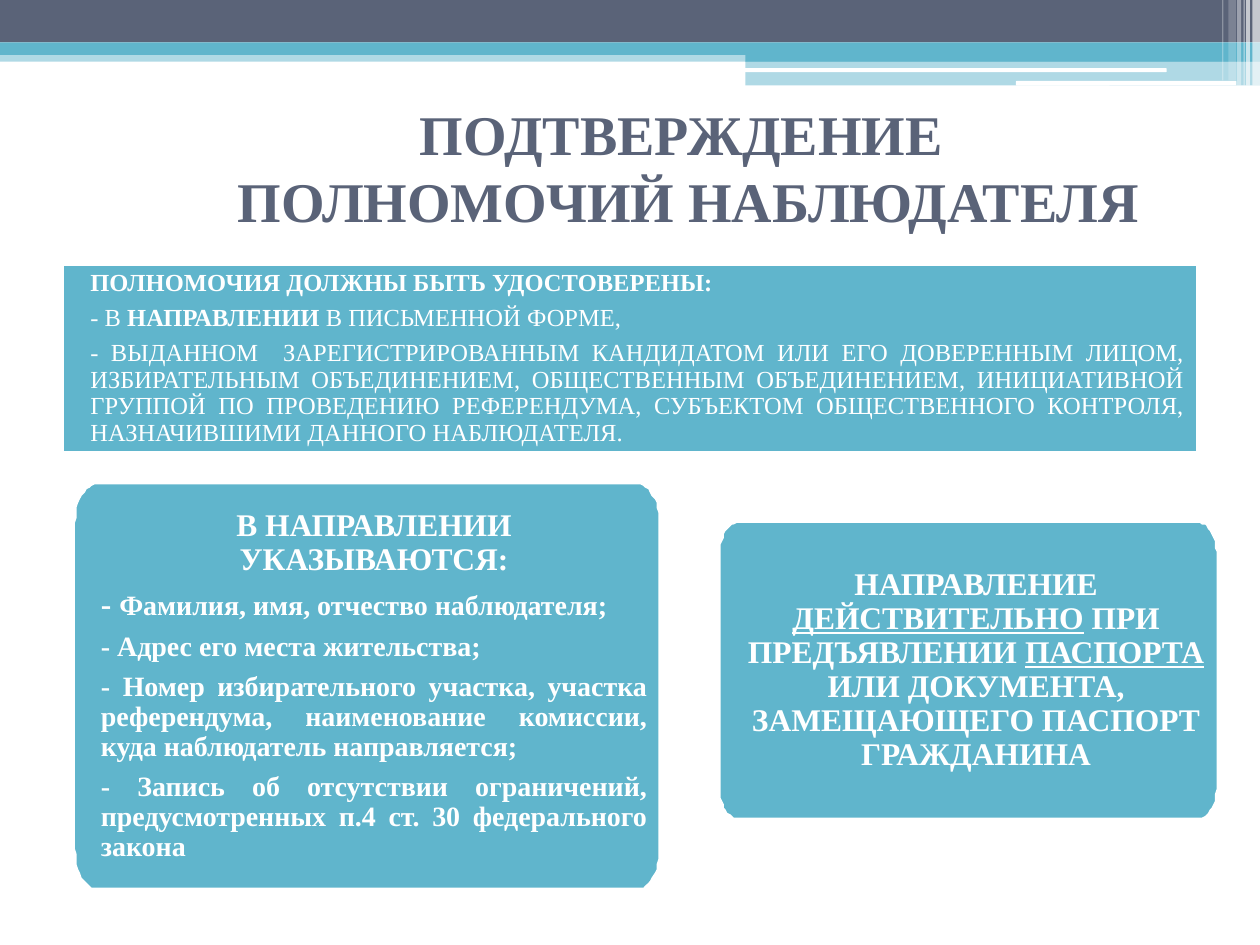
from math import cos, pi, sin

from lxml.etree import SubElement
from pptx import Presentation
from pptx.dml.color import RGBColor
from pptx.enum.shapes import MSO_SHAPE
from pptx.enum.text import MSO_ANCHOR, MSO_AUTO_SIZE, PP_ALIGN
from pptx.oxml.ns import qn
from pptx.util import Pt

COLORS = {"slate": "5A6378", "aqua": "60B5CC", "white": "FFFFFF"}
FONT = "Times New Roman"
PANEL_INSET = 7.2
PANEL_INDENT = 8.6

# Header bands: left, top, width, height, colour, opacity in percent
BANDS = [
    (0, 28.8, 720, 6.5, "aqua", 50),
    (0, 0, 720, 24.2, "slate", 100),
    (0, 24.2, 720, 7.2, "aqua", 100),
    (426, 28.1, 294, 7.2, "aqua", 100),
    (426, 34.8, 294, 14, "aqua", 50),
]
# White rounded bars under the bands: left, top, width, height
BARS = [(425.5, 39, 241.2, 2.2), (580.5, 46.3, 126, 2.6)]
# Light stripes at the right edge: left, width, height, opacity in percent
STRIPES = [
    (715.7, 4.3, 49, 65),
    (712.1, 2.2, 49, 65),
    (710.6, 0.7, 49, 60),
    (707, 2.2, 49, 40),
    (702, 4.3, 46, 20),
    (698.4, 0.7, 46, 30),
]

# Paragraphs: alignment, size, runs of (text, format)
BOLD, PLAIN = {"bold": True}, {"bold": False}
MARKED = {"bold": True, "underline": True}
CENTER, JUSTIFY = PP_ALIGN.CENTER, PP_ALIGN.JUSTIFY

CREDENTIALS = [
    (JUSTIFY, 14, [("ПОЛНОМОЧИЯ ДОЛЖНЫ БЫТЬ УДОСТОВЕРЕНЫ:", BOLD)]),
    (JUSTIFY, 14, [("- В ", PLAIN), ("НАПРАВЛЕНИИ", BOLD),
                   (" В ПИСЬМЕННОЙ ФОРМЕ, ", PLAIN)]),
    (JUSTIFY, 14, [(
        "- ВЫДАННОМ  ЗАРЕГИСТРИРОВАННЫМ КАНДИДАТОМ ИЛИ ЕГО ДОВЕРЕННЫМ ЛИЦОМ, "
        "ИЗБИРАТЕЛЬНЫМ ОБЪЕДИНЕНИЕМ, ОБЩЕСТВЕННЫМ ОБЪЕДИНЕНИЕМ, ИНИЦИАТИВНОЙ "
        "ГРУППОЙ ПО ПРОВЕДЕНИЮ РЕФЕРЕНДУМА, СУБЪЕКТОМ ОБЩЕСТВЕННОГО КОНТРОЛЯ, "
        "НАЗНАЧИВШИМИ ДАННОГО НАБЛЮДАТЕЛЯ.", PLAIN)]),
]
CONTENTS = [
    (CENTER, 18, [("В НАПРАВЛЕНИИ УКАЗЫВАЮТСЯ:", BOLD)]),
    (JUSTIFY, 16, [("- ", {"bold": True, "size": Pt(18)}),
                   ("Фамилия, имя, отчество наблюдателя;", BOLD)]),
    (JUSTIFY, 16, [("- Адрес его места жительства;", BOLD)]),
    (JUSTIFY, 16, [("- Номер избирательного участка, участка референдума, "
                    "наименование комиссии, куда наблюдатель направляется; ", BOLD)]),
    (JUSTIFY, 16, [("- Запись об отсутствии ограничений, предусмотренных "
                    "п.4 ст. 30 федерального закона", BOLD)]),
]
VALIDITY = [
    (CENTER, 18, [("НАПРАВЛЕНИЕ ", BOLD), ("ДЕЙСТВИТЕЛЬНО", MARKED),
                  (" ПРИ ПРЕДЪЯВЛЕНИИ ", BOLD), ("ПАСПОРТА", MARKED),
                  (" ИЛИ ДОКУМЕНТА, ЗАМЕЩАЮЩЕГО ПАСПОРТ ГРАЖДАНИНА", BOLD)]),
]


def apply(target, values):
    for name, value in values.items():
        setattr(target, name, value)


def rgb(color):
    return RGBColor.from_string(COLORS[color])


def paint(shape, color, opacity=100, outline=None):
    shape.shadow.inherit = False
    shape.fill.solid()
    shape.fill.fore_color.rgb = rgb(color)
    if opacity < 100:
        fill_color = shape.fill._xPr.find(qn("a:solidFill"))[0]
        SubElement(fill_color, qn("a:alpha")).set("val", str(opacity * 1000))
    if outline:
        shape.line.color.rgb = rgb(outline)
        shape.line.width = Pt(1.5)
    else:
        shape.line.fill.background()


def add_block(slide, left, top, width, height, color, opacity=100,
              outline=None, preset=MSO_SHAPE.RECTANGLE):
    block = slide.shapes.add_shape(preset, Pt(left), Pt(top), Pt(width), Pt(height))
    paint(block, color, opacity, outline)
    return block


def add_rounded_panel(slide, left, top, width, height, radius_x, radius_y):
    """Panel whose corners are quarter ellipses."""
    right, bottom = left + width, top + height
    centers = [
        (right - radius_x, bottom - radius_y),
        (left + radius_x, bottom - radius_y),
        (left + radius_x, top + radius_y),
        (right - radius_x, top + radius_y),
    ]
    steps = 12
    outline = []
    for corner, (center_x, center_y) in enumerate(centers):
        for step in range(steps + 1):
            angle = (corner + step / steps) * pi / 2
            outline.append((center_x + radius_x * cos(angle),
                            center_y + radius_y * sin(angle)))
    builder = slide.shapes.build_freeform(*outline[0], scale=Pt(1))
    builder.add_line_segments(outline[1:], close=True)
    panel = builder.convert_to_shape()
    paint(panel, "aqua", outline="white")
    return panel


def write_panel(panel, paragraphs):
    frame = panel.text_frame
    inset = Pt(PANEL_INSET)
    apply(frame, {"word_wrap": True, "vertical_anchor": MSO_ANCHOR.MIDDLE,
                  "margin_left": inset, "margin_right": inset,
                  "margin_top": inset, "margin_bottom": inset})
    for index, (alignment, size, runs) in enumerate(paragraphs):
        paragraph = frame.add_paragraph() if index else frame.paragraphs[0]
        apply(paragraph, {"alignment": alignment, "line_spacing": 0.9,
                          "space_after": Pt(round(size * 0.35, 1))})
        indent = paragraph._p.get_or_add_pPr()
        indent.set("marL", str(Pt(PANEL_INDENT)))
        indent.set("indent", "0")
        for text, style in runs:
            run = paragraph.add_run()
            run.text = text
            apply(run.font, {"name": FONT, "size": Pt(size), **style})
            run.font.color.rgb = rgb("white")


def add_header(slide):
    for band in BANDS:
        add_block(slide, *band)
    for bar in BARS:
        add_block(slide, *bar, "white", preset=MSO_SHAPE.ROUNDED_RECTANGLE)
    for left, width, height, opacity in STRIPES:
        add_block(slide, left, 0, width, height, "white", opacity)


def write_title(slide):
    title = slide.shapes.title
    apply(title, {"left": Pt(65.5), "top": Pt(53.3),
                  "width": Pt(648), "height": Pt(84.2)})
    frame = title.text_frame
    apply(frame, {"word_wrap": True, "auto_size": MSO_AUTO_SIZE.NONE,
                  "vertical_anchor": MSO_ANCHOR.MIDDLE})
    heading = frame.paragraphs[0]
    heading.alignment = CENTER
    for index, line in enumerate(["ПОДТВЕРЖДЕНИЕ", " ПОЛНОМОЧИЙ НАБЛЮДАТЕЛЯ"]):
        if index:
            heading.add_line_break()
        run = heading.add_run()
        run.text = line
        apply(run.font, {"name": FONT, "size": Pt(32), "bold": True})
        run.font.color.rgb = rgb("slate")


def main():
    deck = Presentation()
    apply(deck, {"slide_width": Pt(720), "slide_height": Pt(540)})
    slide = deck.slides.add_slide(deck.slide_layouts[5])

    add_header(slide)
    write_title(slide)

    # Who certifies the powers
    credentials = add_block(slide, 36, 151.2, 648, 107.3, "aqua", outline="white")
    write_panel(credentials, CREDENTIALS)

    # What the referral states, and when it is valid
    contents = add_rounded_panel(slide, 42.5, 275.8, 334.8, 232.5, 13, 23)
    write_panel(contents, CONTENTS)
    validity = add_rounded_panel(slide, 411.1, 298.1, 284.4, 170.3, 11, 17)
    write_panel(validity, VALIDITY)

    deck.save("out.pptx")


if __name__ == "__main__":
    main()
